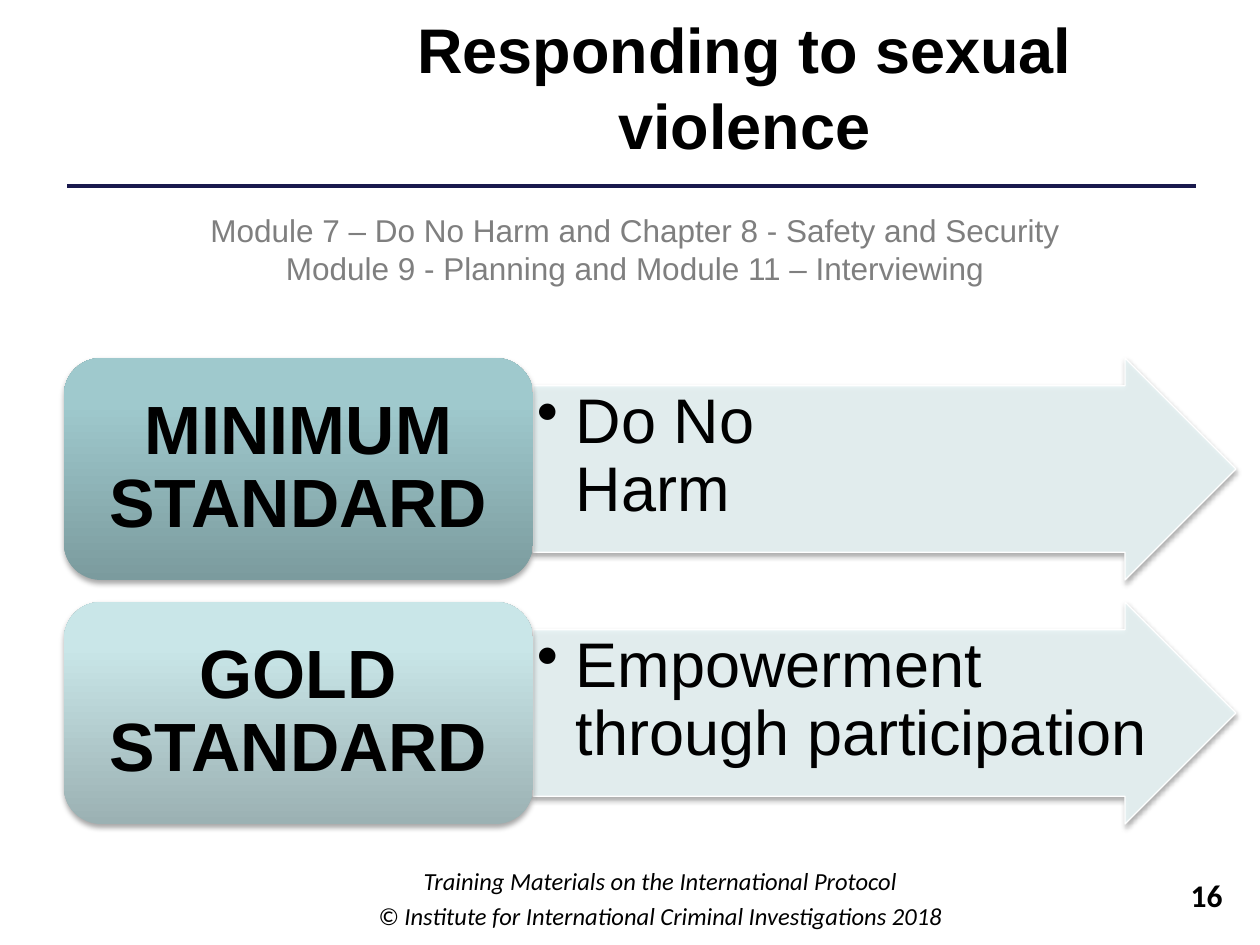
from pptx import Presentation
from pptx.dml.color import RGBColor
from pptx.enum.shapes import MSO_CONNECTOR, MSO_SHAPE
from pptx.enum.text import MSO_ANCHOR, MSO_AUTO_SIZE, PP_ALIGN
from pptx.oxml import parse_xml
from pptx.oxml.ns import nsdecls, qn
from pptx.util import Pt
from lxml.etree import SubElement

THEME = {
    "color": {"text": "000000", "muted": "7F7F7F", "rule": "19194D",
              "arrow": "E7F3F4", "edge": "FFFFFF"},
    "size": {"title": 36, "module": 18, "label": 39, "point": 36,
             "footer": 14, "number": 18},
    "font": {"main": "Arial", "footer": "Calibri"},
}
COLOR, SIZE, FONT = THEME["color"], THEME["size"], THEME["font"]
SCALE = 914400 / 126


def px(*lengths):
    return [round(length * SCALE) for length in lengths]


def write(shape, lines, role, font="main", color="text", align=PP_ALIGN.CENTER,
          anchor=MSO_ANCHOR.TOP, bold=False, italic=False, spacing=None,
          margins=None, bullet_indent=0):
    frame = shape.text_frame
    frame.word_wrap = True
    frame.auto_size = MSO_AUTO_SIZE.NONE
    frame.vertical_anchor = anchor
    if margins:
        side, end = px(*margins)
        frame.margin_left = frame.margin_right = side
        frame.margin_top = frame.margin_bottom = end
    frame.text = "\n".join(lines)
    for paragraph in frame.paragraphs:
        paragraph.alignment = align
        paragraph.line_spacing = spacing
        if bullet_indent:
            properties = paragraph._p.get_or_add_pPr()
            indent = px(bullet_indent)[0]
            properties.set("marL", str(indent))
            properties.set("indent", str(-indent))
            SubElement(properties, qn("a:buChar"), char="•")
        paragraph.font.name = FONT[font]
        paragraph.font.size = Pt(SIZE[role])
        paragraph.font.bold = bold
        paragraph.font.italic = italic
        paragraph.font.color.rgb = RGBColor.from_string(COLOR[color])
    return frame


presentation = Presentation()
presentation.slide_width, presentation.slide_height = px(1260, 945)
slide = presentation.slides.add_slide(presentation.slide_layouts[5])
shapes = slide.shapes

title = shapes.title
title.left, title.top, title.width, title.height = px(292, 4, 905, 165)
write(title, ["Responding to sexual violence"], "title",
      anchor=MSO_ANCHOR.MIDDLE, bold=True)

rule = shapes.add_connector(MSO_CONNECTOR.STRAIGHT, *px(1196, 186, 67, 186))
rule.line.color.rgb = RGBColor.from_string(COLOR["rule"])
rule.line.width = Pt(2.5)
SubElement(rule._element.spPr, qn("a:effectLst"))

modules = shapes.add_textbox(*px(60, 205, 1150, 127))
write(modules, ["Module 7 – Do No Harm and Chapter 8 - Safety and Security",
                "Module 9 - Planning and Module 11 – Interviewing"],
      "module", color="muted")

footer = shapes.add_textbox(*px(343, 860, 635, 67))
footer_frame = write(footer, ["Training Materials on the International Protocol",
                              "© Institute for International Criminal Investigations 2018"],
                     "footer", font="footer", italic=True)
footer_frame.paragraphs[1].space_before = Pt(2.8)

number = shapes.add_textbox(*px(1166, 870, 69, 57))
write(number, ["16"], "number", font="footer", align=PP_ALIGN.RIGHT, bold=True)

standards = [
    ("MINIMUM STANDARD", "Do No\vHarm", ("7B9B9E", "9FC9CD")),
    ("GOLD STANDARD", "Empowerment through participation", ("9BB1B3", "C9E6E8")),
]
for row, (label, point, gradient) in enumerate(standards):
    top = 358 + row * 244
    arrow = shapes.add_shape(MSO_SHAPE.RIGHT_ARROW, *px(533, top, 703, 222))
    arrow.adjustments[0], arrow.adjustments[1] = 0.75, 0.5
    arrow.fill.solid()
    arrow.fill.fore_color.rgb = RGBColor.from_string(COLOR["arrow"])
    fill_color = arrow._element.spPr.find(f"{qn('a:solidFill')}/{qn('a:srgbClr')}")
    SubElement(fill_color, qn("a:alpha"), val="90000")
    arrow.line.color.rgb = RGBColor.from_string(COLOR["edge"])
    arrow.line.width = Pt(0.75)

    point_box = shapes.add_textbox(*px(533, top + 27, 619, 166))
    write(point_box, [point], "point", align=PP_ALIGN.LEFT, spacing=0.9,
          margins=(4, 4), bullet_indent=39)

    box = shapes.add_shape(MSO_SHAPE.ROUNDED_RECTANGLE, *px(64, top, 469, 222))
    box.fill.gradient()
    box.fill.gradient_angle = 90
    for stop, color, position in zip(box.fill.gradient_stops, gradient, (0, 0.8)):
        stop.color.rgb = RGBColor.from_string(color)
        stop.position = position
    box.line.fill.background()
    write(box, [label], "label", anchor=MSO_ANCHOR.MIDDLE, bold=True, spacing=0.9,
          margins=(20, 10))

    for shape in (arrow, box):
        shape.shadow.inherit = False
        shape._element.spPr.find(qn("a:effectLst")).append(parse_xml(
            f'<a:outerShdw {nsdecls("a")} blurRad="40000" dist="23000" dir="5400000" '
            'rotWithShape="0"><a:srgbClr val="000000"><a:alpha val="35000"/>'
            '</a:srgbClr></a:outerShdw>'))

presentation.save("out.pptx")
